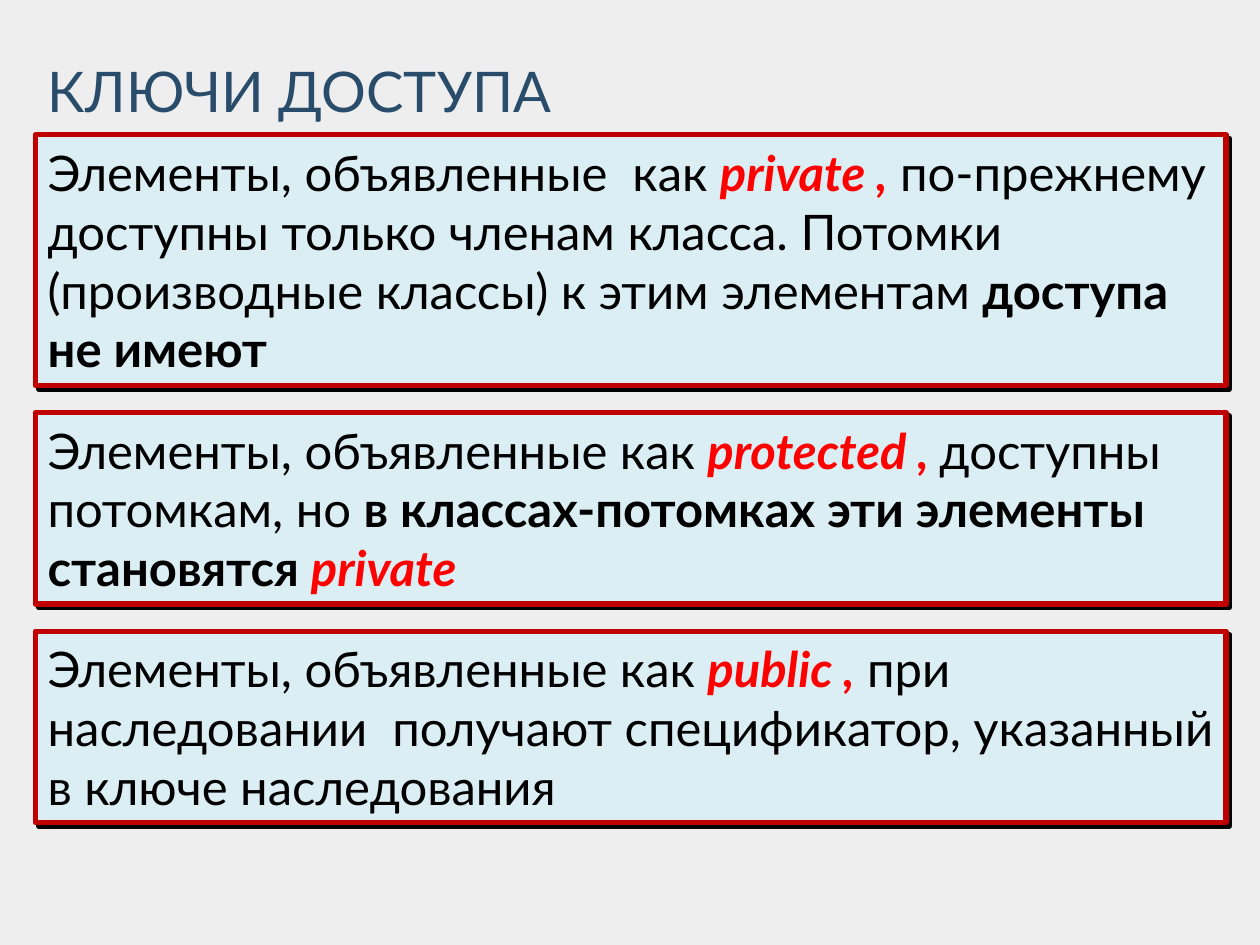
from lxml import etree
from pptx import Presentation
from pptx.dml.color import RGBColor
from pptx.enum.shapes import MSO_SHAPE
from pptx.enum.text import MSO_ANCHOR, MSO_AUTO_SIZE, PP_ALIGN
from pptx.oxml.ns import qn
from pptx.util import Inches, Pt

RECTANGLE = MSO_SHAPE.RECTANGLE
MIDDLE = MSO_ANCHOR.MIDDLE
LEFT = PP_ALIGN.LEFT
GROW = MSO_AUTO_SIZE.SHAPE_TO_FIT_TEXT

COLORS = {
    "background": "EEEEEE",
    "title": "284C6A",
    "card": "DBEEF4",
    "border": "C00000",
    "shadow": "000000",
    "text": "000000",
    "keyword": "FF0000",
}

# Layout in percent of the slide's width or height
MARGIN, CARD_WIDTH, TITLE_WIDTH = 2.8, 94.5, 93.7
TITLE_TOP, TITLE_HEIGHT = 4.8, 9.47
LINE_HEIGHT, CARD_PADDING, CARD_GAP = 6.27, 1.45, 2.87

# Each card: number of lines and its (style, text) parts
CARDS = [
    (4, [("plain", "Элементы, объявленные  как "),
         ("keyword", "private ,"),
         ("plain", " по-прежнему доступны только членам класса. "
                   "Потомки (производные классы) к этим элементам "),
         ("strong", "доступа не имеют")]),
    (3, [("plain", "Элементы, объявленные как "),
         ("keyword", "protected , "),
         ("plain", "доступны потомкам, но "),
         ("strong", "в классах-потомках эти элементы становятся "),
         ("keyword", "private")]),
    (3, [("plain", "Элементы, объявленные как "),
         ("keyword", "public ,"),
         ("plain", " при наследовании  получают спецификатор, "
                   "указанный в ключе наследования")]),
]


def rgb(name):
    return RGBColor.from_string(COLORS[name])


class SlideBuilder:
    font_name = "Lato"
    title_size = Pt(32)
    body_size = Pt(28)

    def __init__(self, prs):
        self.width, self.height = prs.slide_width, prs.slide_height
        self.slide = prs.slides.add_slide(prs.slide_layouts[6])
        fill = self.slide.background.fill
        fill.solid()
        fill.fore_color.rgb = rgb("background")

    def area(self, left, top, width, height):
        return (int(self.width * left / 100), int(self.height * top / 100),
                int(self.width * width / 100), int(self.height * height / 100))

    def title(self, text, *area):
        frame = self.slide.shapes.add_textbox(*self.area(*area)).text_frame
        frame.word_wrap = True
        frame.vertical_anchor = MIDDLE
        heading = frame.paragraphs[0]
        heading.text = text
        heading.font.name = self.font_name
        heading.font.size = self.title_size
        heading.font.color.rgb = rgb("title")

    def card(self, parts, *area):
        card = self.slide.shapes.add_shape(RECTANGLE, *self.area(*area))
        card.fill.solid()
        card.fill.fore_color.rgb = rgb("card")
        card.line.color.rgb = rgb("border")
        card.line.width = Pt(3)
        self.hard_shadow(card)

        frame = card.text_frame
        frame.word_wrap = True
        frame.auto_size = GROW
        frame.vertical_anchor = MIDDLE
        rule = frame.paragraphs[0]
        rule.alignment = LEFT
        rule.font.name = self.font_name
        rule.font.size = self.body_size
        for style, text in parts:
            run = rule.add_run()
            run.text = text
            run.font.bold = style != "plain"
            run.font.italic = style == "keyword"
            run.font.color.rgb = rgb("keyword" if style == "keyword" else "text")

    def hard_shadow(self, shape):
        """Add an unblurred shadow, cast to the lower right."""
        shape.shadow.inherit = False
        effects = shape.element.spPr.find(qn("a:effectLst"))
        shadow = etree.SubElement(effects, qn("a:outerShdw"), blurRad="0",
                                  dist=str(Pt(2.8)), dir=str(45 * 60000),
                                  algn="ctr", rotWithShape="0")
        etree.SubElement(shadow, qn("a:srgbClr"), val=COLORS["shadow"])


def main():
    prs = Presentation()
    prs.slide_width, prs.slide_height = Inches(10), Inches(7.5)
    builder = SlideBuilder(prs)

    # Heading
    builder.title("КЛЮЧИ ДОСТУПА", MARGIN, TITLE_TOP, TITLE_WIDTH, TITLE_HEIGHT)

    # Access rules, stacked below the heading
    top = TITLE_TOP + TITLE_HEIGHT
    for lines, parts in CARDS:
        height = lines * LINE_HEIGHT + CARD_PADDING
        builder.card(parts, MARGIN, top, CARD_WIDTH, height)
        top += height + CARD_GAP

    prs.save("out.pptx")


if __name__ == "__main__":
    main()
